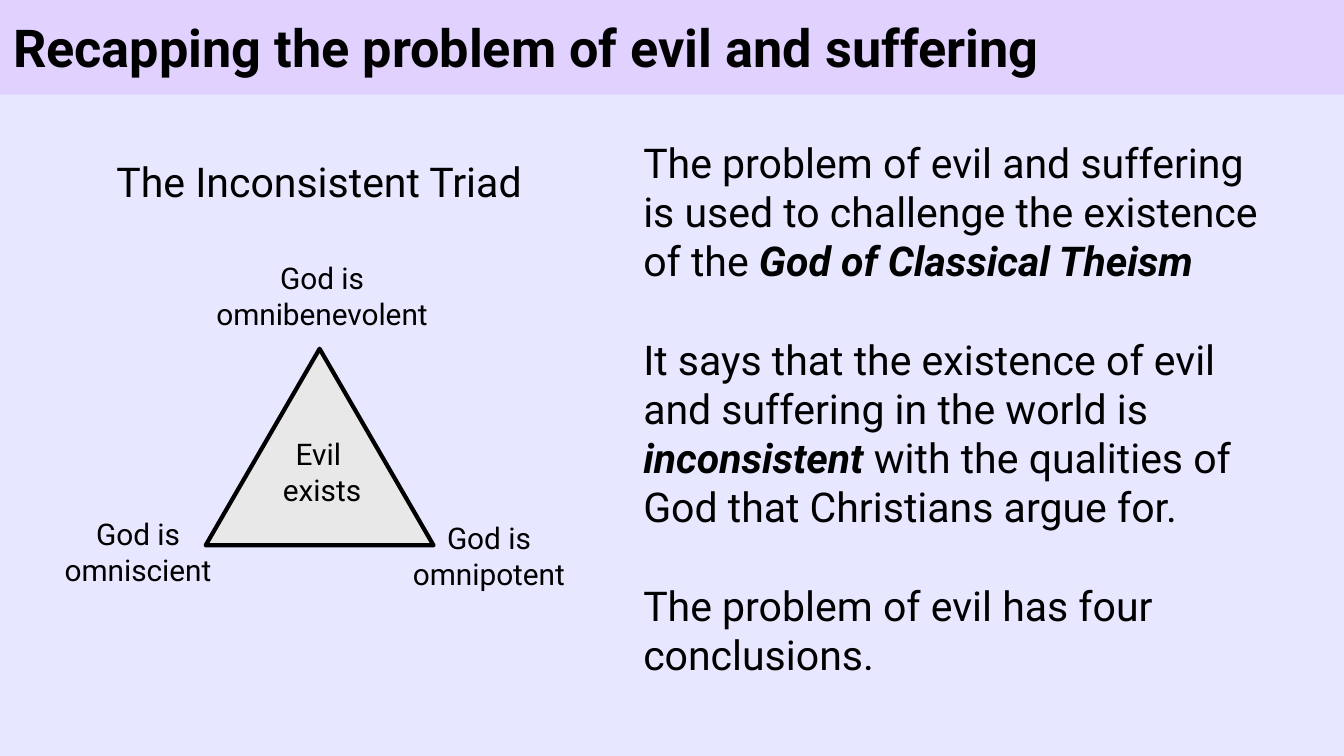
from pptx import Presentation
from pptx.dml.color import RGBColor
from pptx.enum.shapes import MSO_SHAPE
from pptx.enum.text import MSO_ANCHOR, PP_ALIGN
from pptx.util import Inches, Pt

RECT, TRIANGLE = MSO_SHAPE.RECTANGLE, MSO_SHAPE.ISOSCELES_TRIANGLE
TOP, MIDDLE = MSO_ANCHOR.TOP, MSO_ANCHOR.MIDDLE
LEFT, CENTER = PP_ALIGN.LEFT, PP_ALIGN.CENTER

WIDE, HIGH = 13.33, 7.5
INSET = 0.13
FONT = "Roboto"
COLORS = {"page": "E7E7FF", "band": "E0D1FF", "shape": "E8E8E8", "ink": "000000"}
SIZES = {"title": 37.3, "body": 29.3, "label": 21.3}
GAP = 35.2  # one line of body text, in points

# Each paragraph is a list of (text, format) runs.
PLAIN, BOLD = {}, {"bold": True}
STRONG = {"bold": True, "italic": True}
TITLE = [[("Recapping the problem of evil and suffering", BOLD)]]
BODY = [
    [("The problem of evil and suffering is used to challenge the existence of the ", PLAIN),
     ("God of Classical Theism", STRONG)],
    [("It says that the existence of evil and suffering in the world is ", PLAIN),
     ("inconsistent ", STRONG),
     ("with the qualities of God that Christians argue for.", PLAIN)],
    [("The problem of evil has four conclusions.", PLAIN)],
]
HEADING = [[("The Inconsistent Triad", PLAIN)]]

# Lines, then the box: left, top, width, height
LABELS = [
    (("God is", "omnibenevolent"), (1.91, 2.45, 2.57, 0.99)),
    (("God is", "omnipotent"), (3.72, 5.03, 2.26, 1.35)),
    (("God is", "omniscient"), (0.24, 4.99, 2.26, 0.99)),
    (("Evil ", "exists"), (1.91, 4.19, 2.57, 0.99)),
]
BAND = (0, -0.02, WIDE, 0.96)
TRIAD = (2.04, 3.46, 2.26, 1.95)
HEAD_BOX = (0.98, 1.42, 4.37, 0.76)
BODY_BOX = (6.25, 1.23, 6.58, 5.39)


def color(name):
    return RGBColor.from_string(COLORS[name])


def place(box):
    return [Inches(side) for side in box]


def write(shape, paras, size, align=LEFT, anchor=TOP, gap=0):
    frame = shape.text_frame
    style = dict.fromkeys(
        ("margin_left", "margin_top", "margin_right", "margin_bottom"), Inches(INSET))
    style.update(word_wrap=True, vertical_anchor=anchor)
    for key, value in style.items():
        setattr(frame, key, value)
    for i, runs in enumerate(paras):
        para = frame.add_paragraph() if i else frame.paragraphs[0]
        para.alignment = align
        para.space_before = Pt(gap if i else 0)
        for text, form in runs:
            run = para.add_run()
            run.text = text
            run.font.color.rgb = color("ink")
            for key, value in {"name": FONT, "size": Pt(SIZES[size]), **form}.items():
                setattr(run.font, key, value)


def add_solid(slide, kind, box, fill, line=0):
    shape = slide.shapes.add_shape(kind, *place(box))
    shape.shadow.inherit = False
    shape.fill.solid()
    shape.fill.fore_color.rgb = color(fill)
    if line:
        shape.line.color.rgb = color("ink")
        shape.line.width = Pt(line)
    else:
        shape.line.fill.background()
    return shape


def add_text(slide, box, *args, **form):
    write(slide.shapes.add_textbox(*place(box)), *args, **form)


def main():
    deck = Presentation()
    deck.slide_width, deck.slide_height = Inches(WIDE), Inches(HIGH)
    slide = deck.slides.add_slide(deck.slide_layouts[6])
    slide.background.fill.solid()
    slide.background.fill.fore_color.rgb = color("page")

    add_text(slide, BODY_BOX, BODY, "body", gap=GAP)
    band = add_solid(slide, RECT, BAND, "band")
    write(band, TITLE, "title", anchor=MIDDLE)
    add_solid(slide, TRIANGLE, TRIAD, "shape", line=3)
    add_text(slide, HEAD_BOX, HEADING, "body", align=CENTER)
    for lines, box in LABELS:
        add_text(slide, box, [[(line, PLAIN)] for line in lines], "label", align=CENTER)

    deck.save("out.pptx")


if __name__ == "__main__":
    main()
